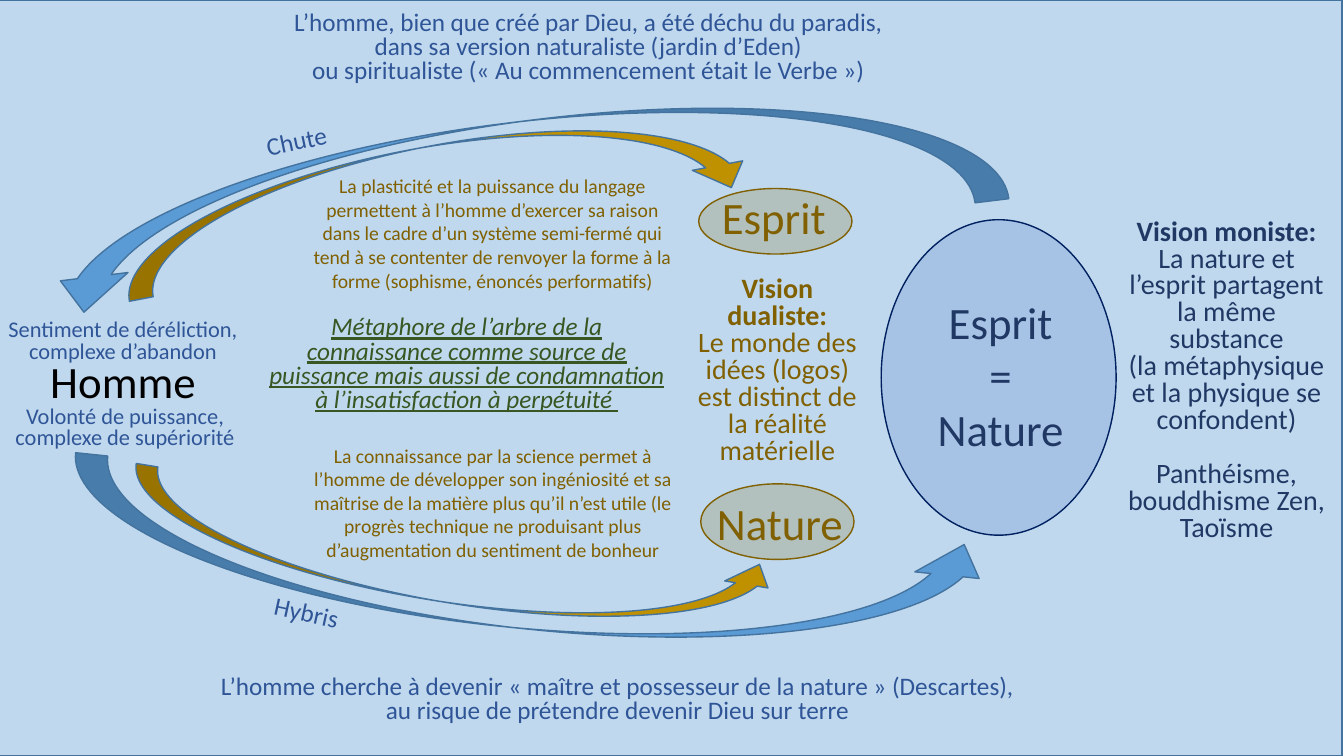
from lxml import etree
from pptx import Presentation
from pptx.dml.color import RGBColor
from pptx.enum.shapes import MSO_SHAPE
from pptx.enum.text import MSO_AUTO_SIZE, PP_ALIGN
from pptx.oxml.ns import qn
from pptx.util import Inches, Pt

RECTANGLE = MSO_SHAPE.RECTANGLE
ELLIPSE = MSO_SHAPE.OVAL
ARROW = MSO_SHAPE.CURVED_DOWN_ARROW
CENTER = PP_ALIGN.CENTER
LEFT = PP_ALIGN.LEFT
FIT_SHAPE = MSO_AUTO_SIZE.SHAPE_TO_FIT_TEXT
BLANK_LAYOUT = 6
TIGHT = 0.8

COLORS = {
    "sky": "5B9BD5",
    "outline": "43739E",
    "blue": "4472C4",
    "navy": "002060",
    "monist": "203864",
    "caption": "2F5597",
    "gold": "BF9000",
    "dualist": "806000",
    "green": "385723",
    "black": "000000",
}


class SlideBuilder:
    font_name = "Calibri"

    def __init__(self, slide):
        self.slide = slide

    def color(self, name):
        return RGBColor.from_string(COLORS[name])

    def shape(self, kind, bounds, fill, line, opacity=None):
        shape = self.slide.shapes.add_shape(kind, *map(Inches, bounds))
        shape.shadow.inherit = False
        shape.fill.solid()
        shape.fill.fore_color.rgb = self.color(fill)
        shape.line.color.rgb = self.color(line)
        shape.line.width = Pt(1)
        if opacity is not None:
            fill_color = shape._element.spPr.find(qn("a:solidFill"))[0]
            alpha = etree.SubElement(fill_color, qn("a:alpha"))
            alpha.set("val", str(opacity * 1000))
        return shape

    def arrow(self, bounds, fill, rotation, flip=None, adjustments=()):
        arrow = self.shape(ARROW, bounds, fill, "outline")
        arrow.rotation = rotation
        if flip:
            arrow._element.spPr.find(qn("a:xfrm")).set(flip, "1")
        for index, value in enumerate(adjustments):
            arrow.adjustments[index] = value

    def text(self, bounds, paragraphs, size, color, spacing=None,
             align=CENTER, rotation=0, heading=False, emphasis=False):
        box = self.slide.shapes.add_textbox(*map(Inches, bounds))
        box.rotation = rotation
        frame = box.text_frame
        frame.word_wrap = True
        frame.auto_size = FIT_SHAPE
        for index, content in enumerate(paragraphs):
            para = frame.paragraphs[0] if index == 0 else frame.add_paragraph()
            para.text = content
            para.alignment = align
            para.line_spacing = spacing
            font = para.font
            font.name = self.font_name
            font.size = Pt(size)
            font.color.rgb = self.color(color)
            font.bold = heading and index == 0
            font.italic = emphasis
            font.underline = emphasis
        return frame

    def caption(self, bounds, paragraphs, size=18, rotation=0):
        self.text(bounds, paragraphs, size, "caption", TIGHT, rotation=rotation)


def build_slide(page):
    page.shape(RECTANGLE, (-0.02, 0, 13.33, 7.5), "sky", "outline", 39)
    page.text((0.4, 3.46, 2.17, 0.64), ["Homme"], 32, "black", align=LEFT)

    page.arrow((0.38, 1.21, 9.58, 1.35), "sky", 353, "flipH")
    page.caption((2.69, 0.07, 6.29, 0.83), [
        "L’homme, bien que créé par Dieu, a été déchu du paradis, "
        "dans sa version naturaliste (jardin d’Eden)",
        "ou spiritualiste (« Au commencement était le Verbe »)",
    ])
    page.arrow((0.66, 4.96, 9.18, 1.28), "sky", 5.9, "flipV")
    page.shape(ELLIPSE, (8.74, 2.18, 2.33, 3.13), "blue", "navy", 20)
    page.caption((2.01, 6.66, 8.23, 0.59), [
        "L’homme cherche à devenir « maître et possesseur de la nature » "
        "(Descartes), au risque de prétendre devenir Dieu sur terre",
    ])

    monist_frame = page.text((11.01, 2.13, 2.31, 3.33), [
        "Vision moniste:",
        "La nature et l’esprit partagent la même substance",
        "(la métaphysique et la physique se confondent)",
        "Panthéisme, bouddhisme Zen, Taoïsme",
    ], 20, "monist", TIGHT, heading=True)
    monist_frame.paragraphs[-1].space_before = Pt(19.5)
    page.text((8.91, 2.87, 2.03, 1.72), ["Esprit", "=", "Nature"], 32, "monist")

    page.arrow((1.14, 1.45, 6.33, 0.96), "gold", 349.3,
               adjustments=(0.25, 0.53, 0.25))
    page.text((2.93, 1.68, 3.91, 1.28), [
        "La plasticité et la puissance du langage permettent à l’homme "
        "d’exercer sa raison dans le cadre d’un système semi-fermé qui tend "
        "à se contenter de renvoyer la forme à la forme (sophisme, énoncés "
        "performatifs)",
    ], 14, "dualist")
    page.shape(ELLIPSE, (6.93, 1.87, 1.52, 0.65), "dualist", "dualist", 20)
    page.text((6.66, 1.83, 2.03, 0.64), ["Esprit"], 32, "dualist")

    page.arrow((1.24, 5.11, 6.48, 0.87), "gold", 189.2, "flipH")
    page.text((2.97, 4.35, 3.84, 1.28), [
        "La connaissance par la science permet à l’homme de développer son "
        "ingéniosité et sa maîtrise de la matière plus qu’il n’est utile (le "
        "progrès technique ne produisant plus d’augmentation du sentiment de "
        "bonheur",
    ], 14, "dualist")
    page.shape(ELLIPSE, (6.95, 4.8, 1.52, 0.75), "dualist", "dualist", 20)
    page.text((6.72, 4.87, 2.03, 0.64), ["Nature"], 32, "dualist")

    page.text((2.51, 3.09, 4.24, 1.08), [
        "Métaphore de l’arbre de la connaissance comme source de puissance "
        "mais aussi de condamnation à l’insatisfaction à perpétuité ",
    ], 18, "green", TIGHT, emphasis=True)
    page.text((6.82, 2.7, 1.78, 1.99), [
        "Vision dualiste:",
        "Le monde des idées (logos) est distinct de la réalité matérielle",
    ], 20, "dualist", TIGHT, heading=True)

    page.caption((2.33, 1.25, 1.23, 0.34), ["Chute"], rotation=348)
    page.caption((2.42, 5.93, 1.23, 0.35), ["Hybris"], rotation=12.5)
    page.caption((-0.22, 3.13, 2.88, 0.53),
                 ["Sentiment de déréliction, complexe d’abandon"], 16)
    page.caption((-0.2, 3.99, 2.88, 0.54),
                 ["Volonté de puissance, complexe de supériorité"], 16)


def main():
    deck = Presentation()
    deck.slide_width = Inches(13.33)
    deck.slide_height = Inches(7.5)
    slide = deck.slides.add_slide(deck.slide_layouts[BLANK_LAYOUT])
    build_slide(SlideBuilder(slide))
    deck.save("out.pptx")


if __name__ == "__main__":
    main()
